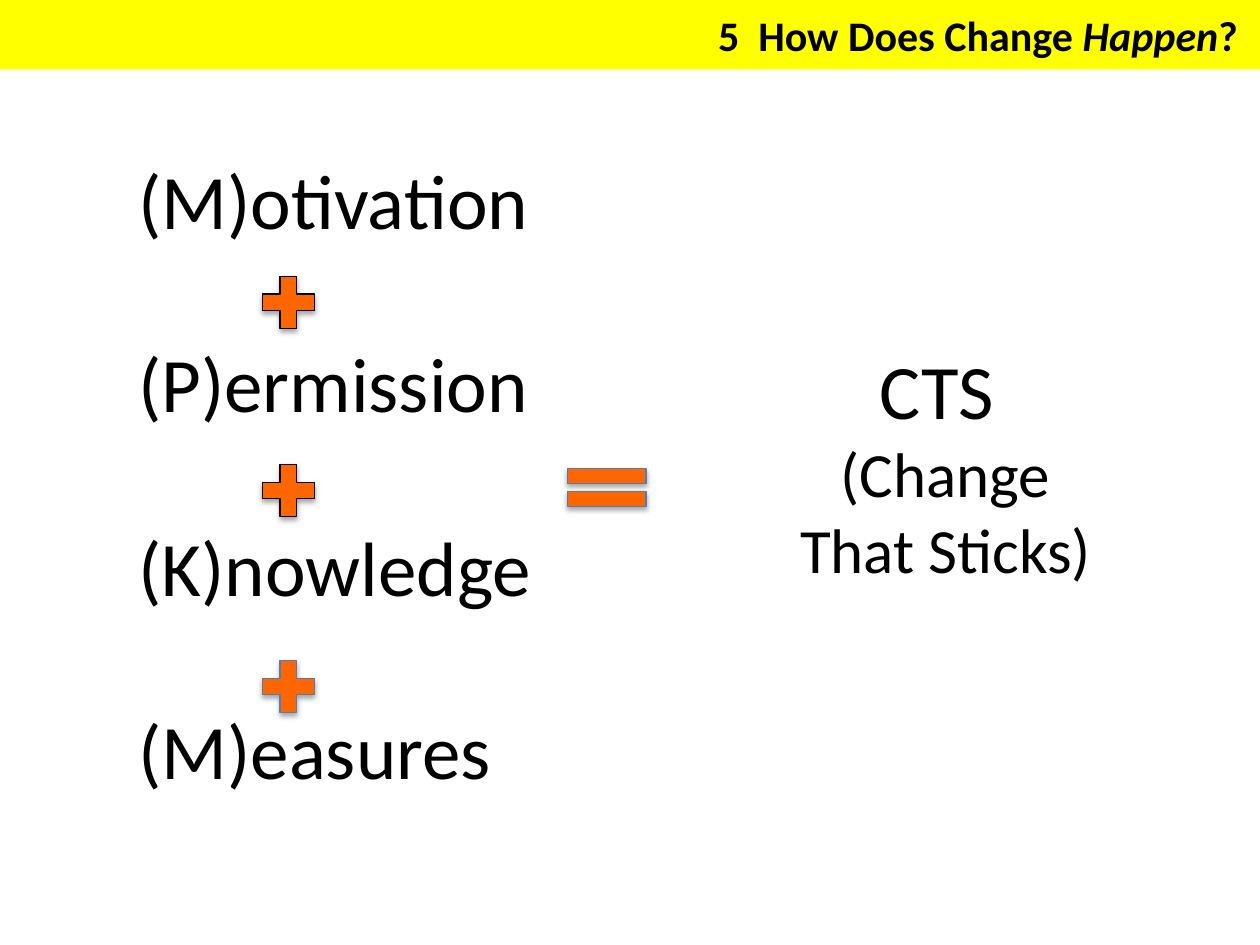
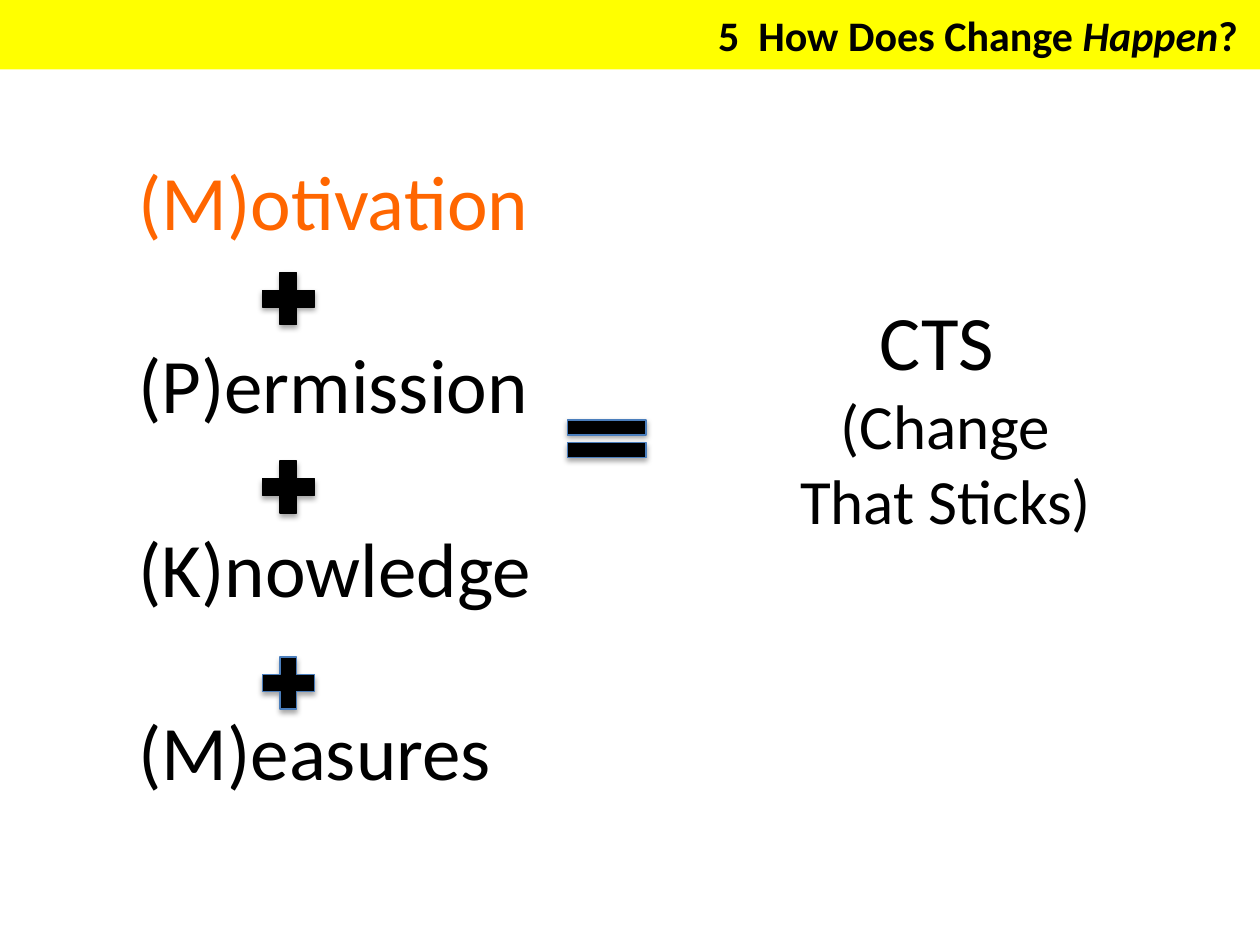
from lxml import etree
from pptx import Presentation
from pptx import util as u
from pptx.dml.color import RGBColor
from pptx.enum import shapes, text
from pptx.oxml import ns

Pt = u.Pt
YELLOW, ORANGE, BLACK, BLUE = "FFFF00", "FF6600", "000000", "4B7EBC"
FACTORS = ["(M)otivation", "(P)ermission", "(K)nowledge", "(M)easures"]
PLUSES = [(152.6, BLACK), (260.2, BLACK), (372.2, BLUE)]


def rgb(value):
    return RGBColor.from_string(value)


def add_run(p, content, size=44, color=BLACK, bold=False, italic=False):
    r = p.add_run()
    r.text = content
    f = r.font
    f.name, f.size, f.bold, f.italic = "Calibri", Pt(size), bold, italic
    f.color.rgb = rgb(color)


def add_shadow(sp):
    sp.shadow.inherit = False
    effects = sp._element.spPr.find(ns.qn("a:effectLst"))
    shadow = etree.SubElement(effects, ns.qn("a:outerShdw"), blurRad=str(Pt(3.1)),
                              dist=str(Pt(1.8)), dir="5400000", rotWithShape="0")
    color = etree.SubElement(shadow, ns.qn("a:srgbClr"), val=BLACK)
    etree.SubElement(color, ns.qn("a:alpha"), val="35000")


class Deck:
    def __init__(self):
        self.prs = Presentation()
        self.prs.slide_width, self.prs.slide_height = Pt(720), Pt(540)
        self.s = None

    def slide(self):
        self.s = self.prs.slides.add_slide(self.prs.slide_layouts[5])
        self.title()

    def title(self):
        sp = self.s.shapes.title
        sp.left, sp.top, sp.width, sp.height = Pt(0), Pt(0), Pt(720), Pt(39.6)
        sp.fill.solid()
        sp.fill.fore_color.rgb = rgb(YELLOW)
        tf = sp.text_frame
        tf.auto_size = text.MSO_AUTO_SIZE.NONE
        tf.vertical_anchor = text.MSO_ANCHOR.MIDDLE
        p = tf.paragraphs[0]
        p.alignment = text.PP_ALIGN.RIGHT
        for content, italic in [("5  How Does Change ", False), ("Happen", True), ("? ", False)]:
            add_run(p, content, size=24, bold=True, italic=italic)

    def text(self, x, y, w, h, lines, align=text.PP_ALIGN.LEFT, gap=0):
        tf = self.s.shapes.add_textbox(Pt(x), Pt(y), Pt(w), Pt(h)).text_frame
        tf.word_wrap = True
        for i, (content, style) in enumerate(lines):
            p = tf.add_paragraph() if i else tf.paragraphs[0]
            p.alignment = align
            if i:
                p.space_before = Pt(gap)
            add_run(p, content, **style)

    def sign(self, kind, x, y, w, h, fill, line):
        sp = self.s.shapes.add_shape(kind, Pt(x), Pt(y), Pt(w), Pt(h))
        sp.fill.solid()
        sp.fill.fore_color.rgb = rgb(fill)
        sp.line.color.rgb = rgb(line)
        sp.line.width = Pt(0.75)
        add_shadow(sp)

    def equation(self, sign_color, first_color, factors_top, plus_shift, result_shift):
        self.slide()
        colors = [first_color] + [BLACK] * (len(FACTORS) - 1)
        factors = [(word, {"color": color}) for word, color in zip(FACTORS, colors)]
        self.text(72, factors_top, 305.3, 380.2, factors, gap=52)
        result = [("CTS ", {}), ("(Change That Sticks)", {"size": 36})]
        self.text(439.2, 192.2 + result_shift, 202.3, 147.6, result, align=text.PP_ALIGN.CENTER)
        for y, line in PLUSES:
            self.sign(shapes.MSO_SHAPE.MATH_PLUS, 144.7, y + plus_shift, 40.3, 40.3,
                      sign_color, line)
        self.sign(shapes.MSO_SHAPE.MATH_EQUAL, 316.1, 260.2 + result_shift, 61.2, 36.7,
                  sign_color, BLUE)


def main():
    deck = Deck()
    deck.equation(ORANGE, BLACK, factors_top=83.5, plus_shift=0, result_shift=0)
    deck.equation(BLACK, ORANGE, factors_top=84.2, plus_shift=-2, result_shift=-27.8)
    deck.prs.save("out.pptx")


if __name__ == "__main__":
    main()
